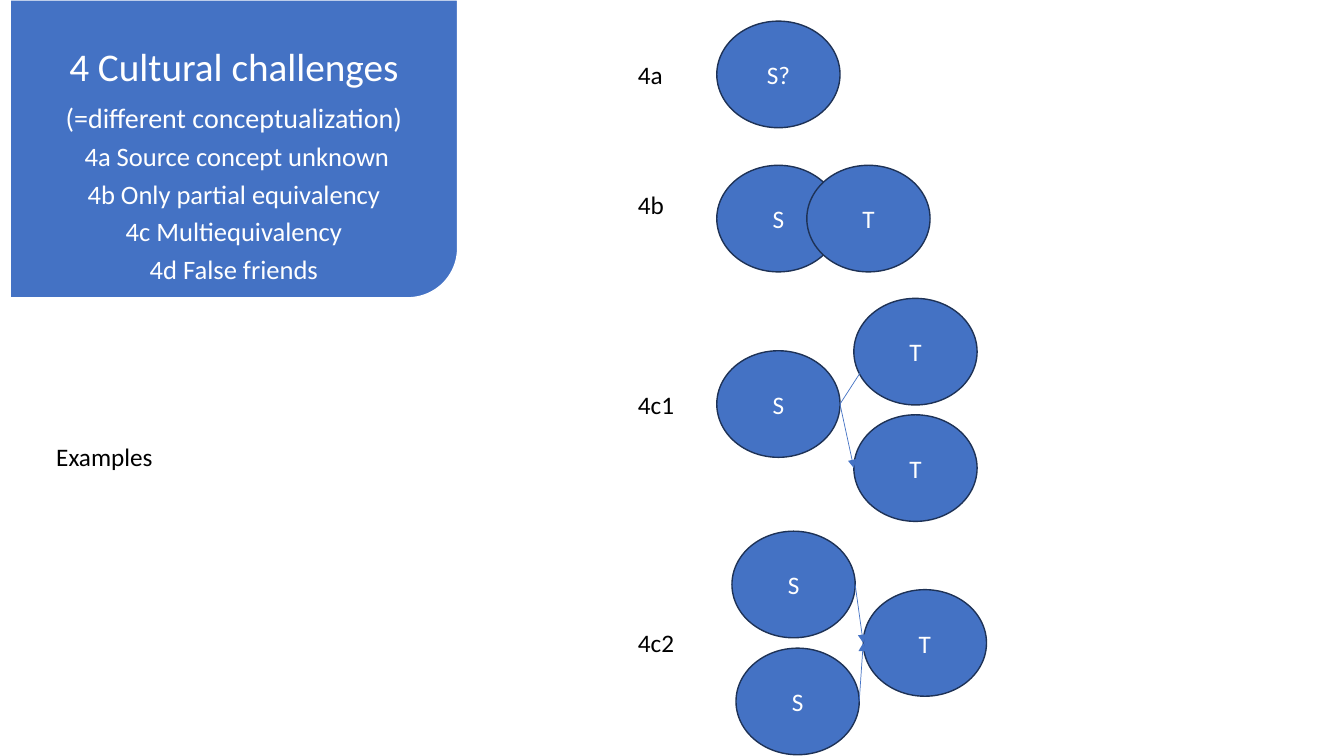
from pptx import Presentation, util as u
from pptx.dml import color
from pptx.enum import shapes, text
from pptx.oxml import ns
from lxml import etree

BLUE, NAVY, WHITE, BLACK = "4472C4", "1E3256", "FFFFFF", "000000"
FONT = "Calibri"
OVAL_W, OVAL_H = 9.17, 14.1  # percent of the slide's width and height

deck = Presentation()
deck.slide_width, deck.slide_height = u.Inches(13.33), u.Inches(7.5)
slide = deck.slides.add_slide(deck.slide_layouts[1])


def paint(target, tone):
    target.rgb = color.RGBColor.from_string(tone)


def across(share):
    return round(deck.slide_width * share / 100)


def down(share):
    return round(deck.slide_height * share / 100)


def area(x, y, w, h):
    return across(x), down(y), across(w), down(h)


def move(shape, box):
    shape.left, shape.top, shape.width, shape.height = area(*box)


def write(par, words, size, tone, align=text.PP_ALIGN.CENTER):
    par.alignment = align
    run = par.add_run()
    run.text = words
    run.font.size, run.font.name = u.Pt(size), FONT
    paint(run.font.color, tone)


def style(shape, line):
    shape.shadow.inherit = False
    shape.fill.solid()
    paint(shape.fill.fore_color, BLUE)
    paint(shape.line.color, line)
    shape.line.width = u.Pt(1)


def fill_lines(holder, box, lines):
    """Set centred lines in a placeholder, without bullets."""
    move(holder, box)
    frame = holder.text_frame
    frame.word_wrap, frame.auto_size = True, text.MSO_AUTO_SIZE.NONE
    frame.vertical_anchor = text.MSO_ANCHOR.TOP
    frame.margin_left = frame.margin_right = u.Inches(0.15)
    frame.margin_top = frame.margin_bottom = 0
    for i, (words, size) in enumerate(lines):
        par = frame.add_paragraph() if i else frame.paragraphs[0]
        write(par, words, size, WHITE)
        par.line_spacing = 0.9
        par.space_before, par.space_after = 0, u.Pt(size * 0.33)
        props = par._p.get_or_add_pPr()
        props.set("marL", "0")
        props.set("indent", "0")
        etree.SubElement(props, ns.qn("a:buNone"))


def add_panel(x, y, w, h):
    """Blue panel, its lower right corner round, with title and list."""
    left, top, wide, high = area(x, y, w, h)
    shift = (wide - high) // 2
    panel = slide.shapes.add_shape(
        shapes.MSO_SHAPE.ROUND_1_RECTANGLE, left + shift, top - shift, high, wide)
    panel.rotation = 90
    style(panel, WHITE)
    slide.shapes._spTree.insert(2, panel._element)  # behind the text
    title, body = slide.placeholders
    fill_lines(title, (x, y + 0.16 * h, w, 0.17 * h), [("4 Cultural challenges", 28)])
    fill_lines(body, (x, y + 0.35 * h, w, 0.65 * h), [
        ("(=different conceptualization)", 20),
        (" 4a Source concept unknown", 19),
        ("4b Only partial equivalency", 19),
        ("4c Multiequivalency", 19),
        ("4d False friends", 19)])


def add_label(words, x, y, w):
    frame = slide.shapes.add_textbox(*area(x, y, w, 5.33)).text_frame
    frame.word_wrap = True
    write(frame.paragraphs[0], words, 18, BLACK, text.PP_ALIGN.LEFT)


def add_oval(words, x, y):
    oval = slide.shapes.add_shape(
        shapes.MSO_SHAPE.OVAL, *area(x, y, OVAL_W, OVAL_H))
    style(oval, NAVY)
    frame = oval.text_frame
    frame.vertical_anchor = text.MSO_ANCHOR.MIDDLE
    write(frame.paragraphs[0], words, 18, WHITE)
    return oval


def add_arrow(start, end, dx, dy):
    """Arrow from the right of one oval to the left of the next."""
    arrow = slide.shapes.add_connector(
        shapes.MSO_CONNECTOR.STRAIGHT,
        start.left + start.width, start.top + start.height // 2,
        end.left + across(dx), end.top + end.height // 2 + down(dy))
    paint(arrow.line.color, BLUE)
    arrow.line.width = u.Pt(0.5)
    etree.SubElement(arrow.line._get_or_add_ln(), ns.qn("a:tailEnd"), type="triangle")
    etree.SubElement(arrow._element.spPr, ns.qn("a:effectLst"))


def add_case(x, y, name, drop, ovals, links=()):
    """One labelled case: ovals placed from its corner, then arrows."""
    add_label(name, x, y + drop, 4.35)
    made = [add_oval(words, x + 6.6 + dx, y + dy) for words, dx, dy in ovals]
    for start, end, dx, dy in links:
        add_arrow(made[start], made[end], dx, dy)


# Panel and examples
add_panel(0.75, 0, 33.3, 39.4)
add_label("Examples", 3.45, 57.75, 31)

# Cases: label drop, ovals (text, dx, dy), arrows (from, to, dx, dy)
CASES = [
    (2.8, "4a", 4.4, [("S?", 0, 0)], []),
    (21.87, "4b", 2.53, [("S", 0, 0), ("T", 6.7, 0)], []),
    (39.47, "4c1", 11.33,
     [("S", 0, 6.93), ("T", 10.2, 0), ("T", 10.2, 15.4)],
     [(0, 1, 1.05, 1.2), (0, 2, 0, 0)]),
    (70.27, "4c2", 12,
     [("S", 1.13, 0), ("S", 1.43, 15.47), ("T", 10.9, 7.73)],
     [(0, 2, 0, 0), (1, 2, 0, 0)]),
]
for top, *case in CASES:
    add_case(46.73, top, *case)

deck.save("out.pptx")
